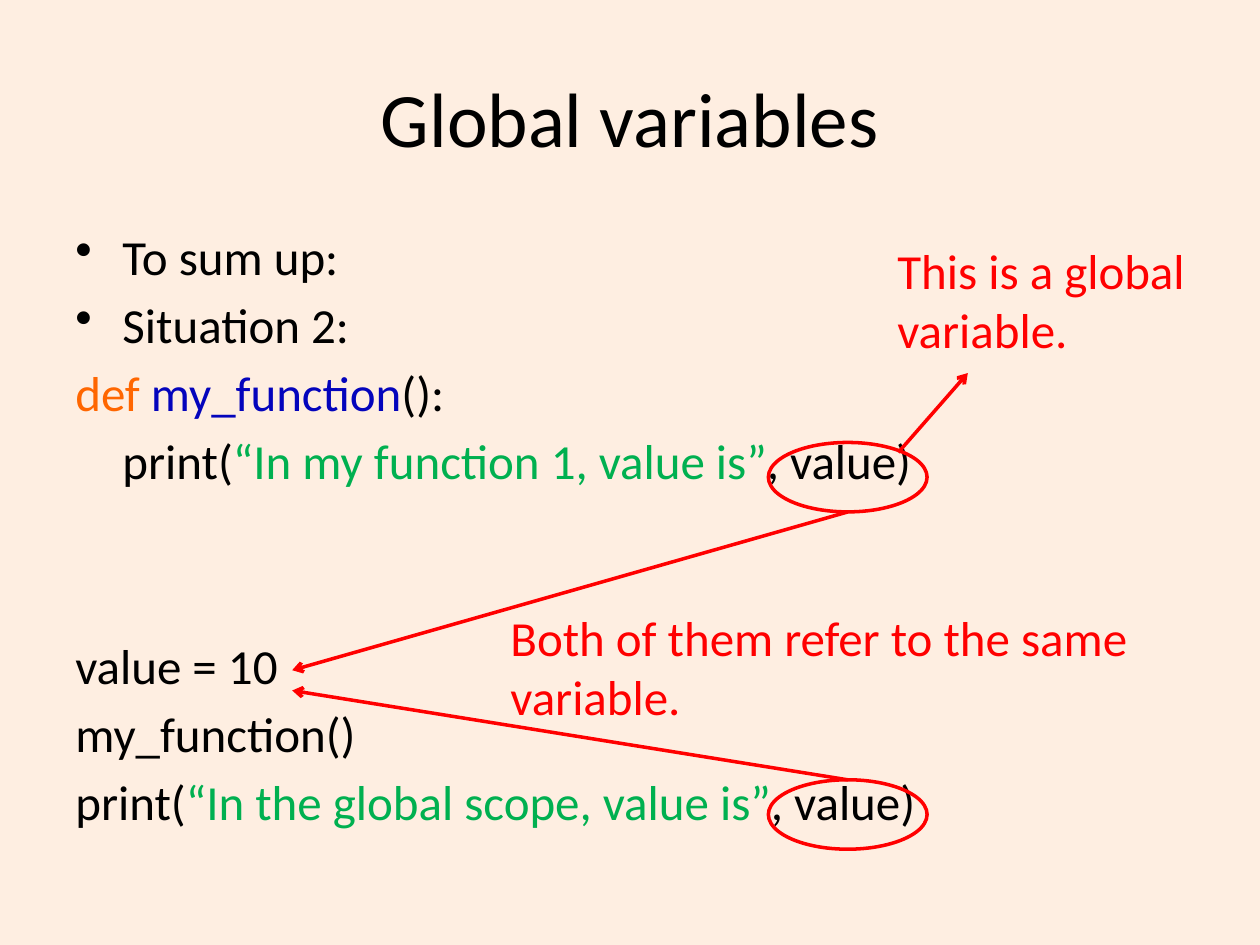
import dataclasses

import lxml.etree
import pptx
import pptx.dml.color
import pptx.enum.shapes
import pptx.enum.text
import pptx.oxml.ns
import pptx.util

Cm = pptx.util.Cm
Pt = pptx.util.Pt

COLORS = {
    "background": "FEEEE1",
    "text": "000000",
    "keyword": "FF6600",
    "function": "0404BC",
    "string": "00B050",
    "mark": "FF0000",
}
FONT = "Calibri"
HANG = 0.95  # hanging indent, cm
LINE_GAP = 5.1  # space between lines, pt
SECTION_GAP = 83.7  # space of two skipped lines, pt


@dataclasses.dataclass
class Box:
    left: float
    top: float
    width: float
    height: float


@dataclasses.dataclass
class Line:
    runs: list[tuple[str, str]]
    margin: float = 0
    bullet: bool = False
    gap: float = LINE_GAP


@dataclasses.dataclass
class Arrow:
    start: tuple[float, float]
    end: tuple[float, float]


def rgb(name: str) -> pptx.dml.color.RGBColor:
    return pptx.dml.color.RGBColor.from_string(COLORS[name])


def add_text(slide, box: Box, lines: list[Line], size: float = 28):
    frame = slide.shapes.add_textbox(
        Cm(box.left), Cm(box.top), Cm(box.width), Cm(box.height)
    ).text_frame
    frame.word_wrap = True
    for index, line in enumerate(lines):
        paragraph = frame.paragraphs[0] if index == 0 else frame.add_paragraph()
        paragraph.font.name = FONT
        paragraph.font.size = Pt(size)
        paragraph.space_before = Pt(line.gap)
        properties = paragraph._p.get_or_add_pPr()
        properties.set("marL", str(Cm(line.margin)))
        if line.bullet:
            properties.set("indent", str(Cm(-line.margin)))
            # The bullet must stand before the default run properties
            bullet = lxml.etree.Element(pptx.oxml.ns.qn("a:buChar"), char="•")
            properties.find(pptx.oxml.ns.qn("a:defRPr")).addprevious(bullet)
        for text, color in line.runs:
            run = paragraph.add_run()
            run.text = text
            run.font.color.rgb = rgb(color)
    return frame


def add_ring(slide, box: Box) -> None:
    ring = slide.shapes.add_shape(
        pptx.enum.shapes.MSO_SHAPE.OVAL,
        Cm(box.left), Cm(box.top), Cm(box.width), Cm(box.height),
    )
    ring.shadow.inherit = False
    ring.fill.background()
    ring.line.color.rgb = rgb("mark")
    ring.line.width = Pt(2)


def add_arrow(slide, arrow: Arrow) -> None:
    connector = slide.shapes.add_connector(
        pptx.enum.shapes.MSO_CONNECTOR.STRAIGHT,
        *(Cm(length) for length in arrow.start + arrow.end),
    )
    connector.line.color.rgb = rgb("mark")
    connector.line.width = Pt(2)
    outline = connector.line._get_or_add_ln()
    lxml.etree.SubElement(outline, pptx.oxml.ns.qn("a:tailEnd"), type="arrow")
    lxml.etree.SubElement(
        connector._element.spPr, pptx.oxml.ns.qn("a:effectLst")
    )


CODE = [
    Line([("To sum up:", "text")], HANG, bullet=True),
    Line([("Situation 2:", "text")], HANG, bullet=True),
    Line([("def ", "keyword"), ("my_function", "function"), ("():", "text")]),
    Line(
        [
            ("print(", "text"),
            ("“In my function 1, value is”", "string"),
            (", value)", "text"),
        ],
        HANG,
    ),
    Line([("value = 10", "text")], gap=SECTION_GAP),
    Line([("my_function()", "text")]),
    Line(
        [
            ("print(", "text"),
            ("“In the global scope, value is”", "string"),
            (", value)", "text"),
        ]
    ),
]
CALLOUTS = [
    (Box(16.89, 4.72, 8.2, 3.61), "This is a global variable."),
    (Box(9.09, 12.12, 15.6, 3.81), "Both of them refer to the same variable."),
]
# Rings around the two uses of the variable
RINGS = [Box(15.49, top, 3.2, 1.4) for top in (8.92, 15.72)]
RING_CENTER = 17.09
ARROWS = [
    Arrow((18.11, 9.12), (19.51, 7.52)),
    Arrow((RING_CENTER, 15.72), (5.89, 13.92)),
    Arrow((RING_CENTER, 10.32), (5.89, 13.51)),
]


def main() -> None:
    deck = pptx.Presentation()
    deck.slide_width, deck.slide_height = Cm(25.4), Cm(19.05)
    slide = deck.slides.add_slide(deck.slide_layouts[6])
    slide.background.fill.solid()
    slide.background.fill.fore_color.rgb = rgb("background")

    # Title
    title = add_text(
        slide,
        Box(1.27, 0.76, 22.86, 3.18),
        [Line([("Global variables", "text")], gap=0)],
        size=44,
    )
    title.vertical_anchor = pptx.enum.text.MSO_ANCHOR.MIDDLE
    title.paragraphs[0].alignment = pptx.enum.text.PP_ALIGN.CENTER

    # Code sample
    add_text(slide, Box(1.27, 4.45, 22.63, 13.87), CODE)

    # Remarks, rings and arrows
    for box, remark in CALLOUTS:
        add_text(slide, box, [Line([(remark, "mark")], HANG)])
    for ring in RINGS:
        add_ring(slide, ring)
    for arrow in ARROWS:
        add_arrow(slide, arrow)

    deck.save("out.pptx")


if __name__ == "__main__":
    main()
